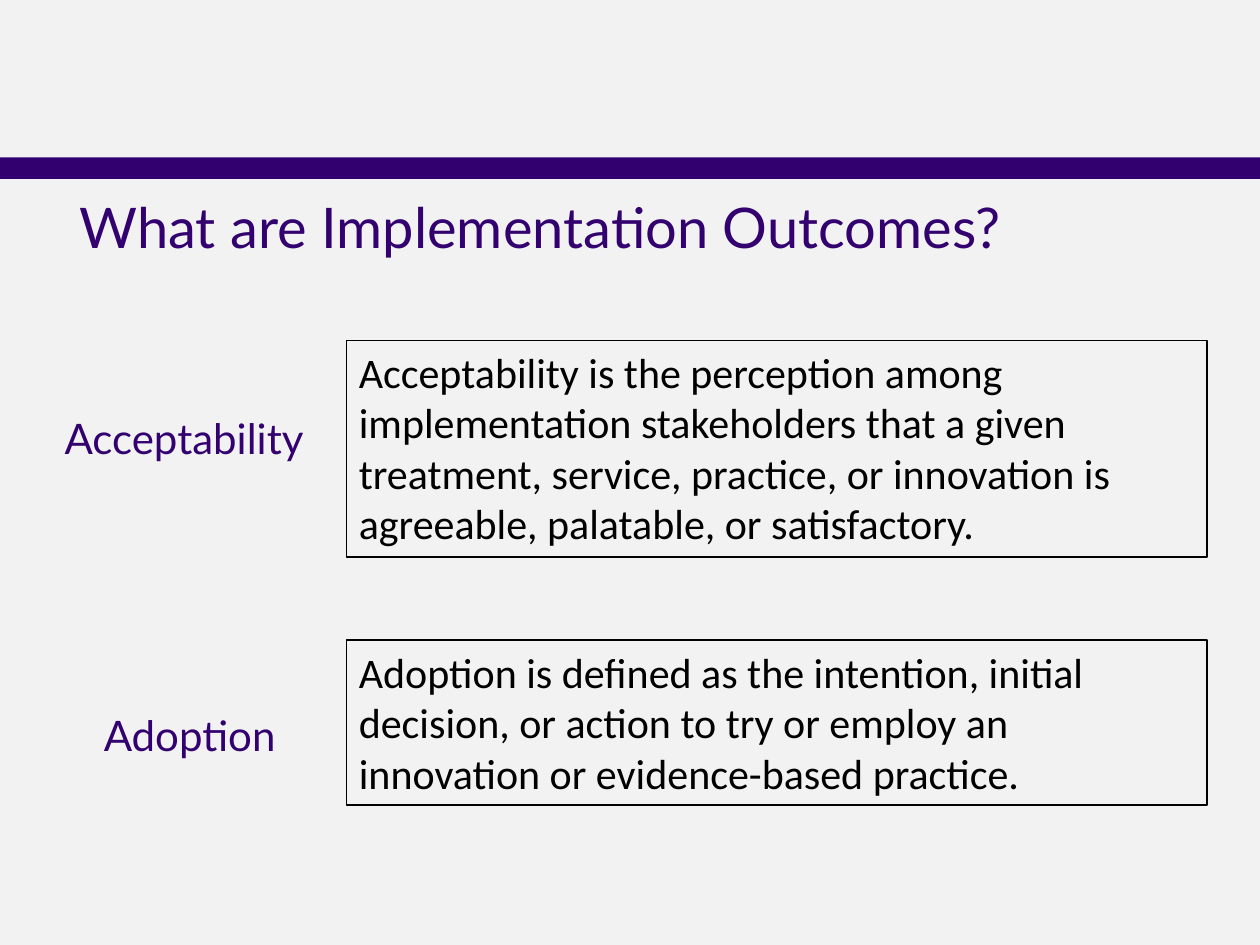
from dataclasses import dataclass

from pptx import Presentation
from pptx.dml.color import RGBColor
from pptx.enum.shapes import MSO_SHAPE
from pptx.enum.text import MSO_ANCHOR, PP_ALIGN
from pptx.util import Inches, Pt

RECTANGLE = MSO_SHAPE.RECTANGLE
TOP, MIDDLE = MSO_ANCHOR.TOP, MSO_ANCHOR.MIDDLE
LEFT, CENTER = PP_ALIGN.LEFT, PP_ALIGN.CENTER
TITLE_ONLY = 5

TITLE = "What are Implementation Outcomes?"
# Label, label box, definition, definition top and height
OUTCOMES = [
    ("Acceptability", (0.25, 3.08, 2.42, 0.78),
     "Acceptability is the perception among implementation stakeholders that "
     "a given treatment, service, practice, or innovation is agreeable, "
     "palatable, or satisfactory.", 2.7, 1.72),
    ("Adoption", (0.17, 5.42, 2.67, 0.83),
     "Adoption is deﬁned as the intention, initial decision, or action to try "
     "or employ an innovation or evidence-based practice.", 5.08, 1.31),
]
DEFINITION_LEFT, DEFINITION_WIDTH = 2.75, 6.83


@dataclass(frozen=True)
class Theme:
    background: RGBColor = RGBColor(0xF2, 0xF2, 0xF2)
    purple: RGBColor = RGBColor(0x33, 0x00, 0x6F)
    black: RGBColor = RGBColor(0, 0, 0)
    heading_font: str = "Lato"
    body_font: str = "Calibri"
    title_size: int = 32
    text_size: int = 24
    border: float = 0.75


THEME = Theme()


def inches(box):
    return [Inches(value) for value in box]


def write(shape, text, *, font=THEME.heading_font, size=THEME.text_size,
          color=THEME.purple, align=CENTER, anchor=MIDDLE):
    frame = shape.text_frame
    frame.word_wrap = True
    frame.vertical_anchor = anchor
    paragraph = frame.paragraphs[0]
    paragraph.alignment = align
    run = paragraph.add_run()
    run.text = text
    run.font.name = font
    run.font.size = Pt(size)
    run.font.color.rgb = color


def add_rectangle(slide, box):
    rectangle = slide.shapes.add_shape(RECTANGLE, *inches(box))
    rectangle.shadow.inherit = False
    return rectangle


def add_band(slide):
    band = add_rectangle(slide, (0, 1.25, 10, 0.17))
    band.fill.solid()
    band.fill.fore_color.rgb = THEME.purple
    band.line.fill.background()


def add_title(slide):
    title = slide.shapes.title
    title.left, title.top, title.width, title.height = inches(
        (0.08, 1.42, 8.42, 0.75))
    write(title, TITLE, size=THEME.title_size)


def add_outcome(slide, label, label_box, definition, top, height):
    write(slide.shapes.add_textbox(*inches(label_box)), label)
    box = add_rectangle(slide, (DEFINITION_LEFT, top, DEFINITION_WIDTH, height))
    box.fill.background()
    box.line.color.rgb = THEME.black
    box.line.width = Pt(THEME.border)
    write(box, definition, font=THEME.body_font, color=THEME.black,
          align=LEFT, anchor=TOP)


def main():
    presentation = Presentation()
    presentation.slide_width = Inches(10)
    presentation.slide_height = Inches(7.5)
    slide = presentation.slides.add_slide(presentation.slide_layouts[TITLE_ONLY])
    slide.background.fill.solid()
    slide.background.fill.fore_color.rgb = THEME.background
    add_band(slide)
    add_title(slide)
    for outcome in OUTCOMES:
        add_outcome(slide, *outcome)
    presentation.save("out.pptx")


if __name__ == "__main__":
    main()
